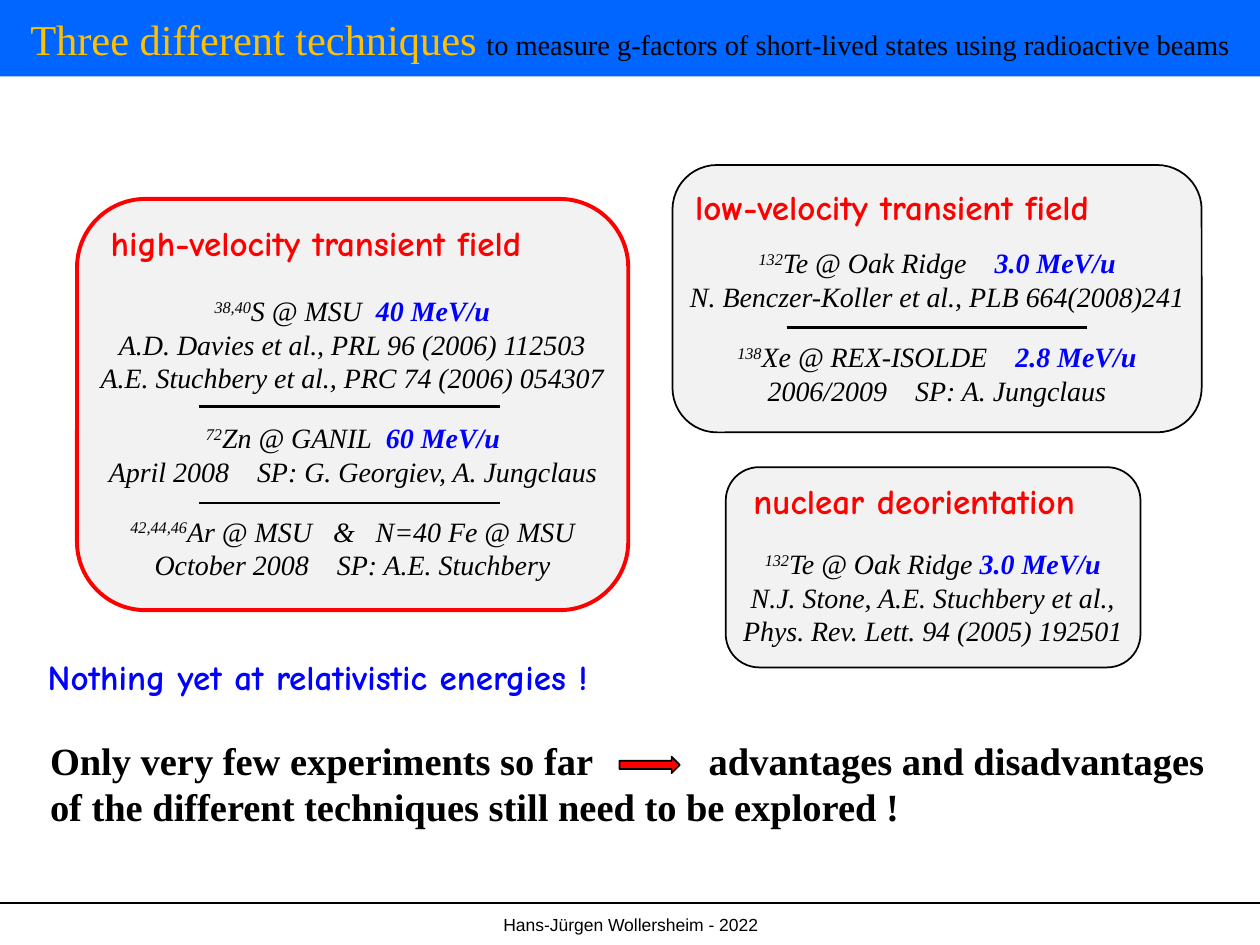
from dataclasses import dataclass, field

from lxml import etree
from pptx import Presentation
from pptx import util as u
from pptx.dml.color import RGBColor
from pptx.enum import shapes, text
from pptx.oxml import ns

Pt = u.Pt
BLACK = RGBColor(0x00, 0x00, 0x00)
RED = RGBColor(0xFF, 0x00, 0x00)
BLUE = RGBColor(0x00, 0x00, 0xFF)
GOLD = RGBColor(0xFF, 0xC0, 0x00)
BANNER_BLUE = RGBColor(0x00, 0x66, 0xFF)
PALE_GREY = RGBColor(0xF2, 0xF2, 0xF2)

SERIF = "Times New Roman"
BODY = {"name": SERIF, "size": Pt(16), "italic": True, "color": BLACK}
ENERGY = BODY | {"bold": True, "color": BLUE}
HEADING = {"name": "Comic Neue", "size": Pt(20), "bold": True, "color": RED}
CONCLUSION = {"name": SERIF, "size": Pt(22), "bold": True, "color": BLACK}
TITLE = {"name": SERIF, "size": Pt(24.3), "color": GOLD}
SUBTITLE = TITLE | {"size": Pt(16.2), "color": BLACK}
FOOTER = {"name": "Arial", "size": Pt(10), "color": BLACK}
CENTER, LEFT = text.PP_ALIGN.CENTER, text.PP_ALIGN.LEFT


@dataclass(frozen=True)
class Run:
    text: str
    style: dict
    superscript: bool = False
    tracking: float = 0


Line = list[Run]


@dataclass(frozen=True)
class Box:
    left: float
    top: float
    width: float
    height: float

    def lengths(self) -> list[u.Length]:
        return [Pt(value) for value in (self.left, self.top, self.width, self.height)]


@dataclass(frozen=True)
class Card:
    frame: Box
    border: RGBColor
    border_width: float
    heading: str
    heading_box: Box
    entries: list[tuple[Box, list[Line]]]
    rule_left: float = 0
    rule_tops: list[float] = field(default_factory=list)


def gap(spaces: int, style: dict) -> Run:
    """One space, tracked out to the width of several."""
    return Run(" ", style, tracking=(spaces - 1) * style["size"].pt / 4)


def plain(*parts: str, spaces: int = 4, style: dict = BODY) -> Line:
    """A line whose parts are set apart by wide gaps."""
    line = [Run(parts[0], style)]
    for part in parts[1:]:
        line += [gap(spaces, style), Run(part, style)]
    return line


def beam(mass: str, place: str, energy: str, spaces: int) -> Line:
    """An isotope with its laboratory and beam energy."""
    return [Run(mass, BODY, superscript=True), Run(place, BODY),
            gap(spaces, BODY), Run(energy, ENERGY)]


def write(frame, lines: list[Line], alignment) -> None:
    for index, line in enumerate(lines):
        paragraph = frame.paragraphs[0] if index == 0 else frame.add_paragraph()
        paragraph.alignment = alignment
        for item in line:
            run = paragraph.add_run()
            run.text = item.text
            for name, value in item.style.items():
                if name == "color":
                    run.font.color.rgb = value
                else:
                    setattr(run.font, name, value)
            properties = run._r.get_or_add_rPr()
            if item.superscript:
                properties.set("baseline", "30000")
            if item.tracking:
                properties.set("spc", str(round(item.tracking * 100)))


def add_text(parent, box: Box, lines: list[Line], alignment=LEFT, wrap: bool = False) -> None:
    frame = parent.add_textbox(*box.lengths()).text_frame
    frame.word_wrap = wrap
    if not wrap:
        frame.auto_size = text.MSO_AUTO_SIZE.SHAPE_TO_FIT_TEXT
    write(frame, lines, alignment)


def add_block(parent, kind, box: Box, fill: RGBColor, border: RGBColor | None = None,
              border_width: float = 1):
    shape = parent.add_shape(kind, *box.lengths())
    shape.shadow.inherit = False
    shape.fill.solid()
    shape.fill.fore_color.rgb = fill
    if border is None:
        shape.line.fill.background()
    else:
        shape.line.color.rgb = border
        shape.line.width = Pt(border_width)
    return shape


def add_rule(parent, left: float, top: float, width: float) -> None:
    rule = parent.add_connector(shapes.MSO_CONNECTOR.STRAIGHT,
                                Pt(left), Pt(top), Pt(left + width), Pt(top))
    rule.line.color.rgb = BLACK
    rule.line.width = Pt(1.5)
    etree.SubElement(rule._element.spPr, ns.qn("a:effectLst"))


def add_card(slide, card: Card) -> None:
    group = slide.shapes.add_group_shape().shapes
    add_block(group, shapes.MSO_SHAPE.ROUNDED_RECTANGLE, card.frame, PALE_GREY,
              card.border, card.border_width)
    add_text(group, card.heading_box, [plain(card.heading, style=HEADING)])
    for box, lines in card.entries:
        add_text(group, box, lines, CENTER)
    for top in card.rule_tops:
        add_rule(group, card.rule_left, top, 171.8)


CARDS = [
    Card(Box(414.7, 267, 237, 114.4), BLACK, 1,
         "nuclear deorientation", Box(423.4, 270.7, 220.3, 31.5),
         [(Box(416, 308.9, 234, 65.4), [
             beam("132", "Te @ Oak Ridge", "3.0 MeV/u", 1),
             plain("N.J. Stone, A.E. Stuchbery et al.,"),
             plain("Phys. Rev. Lett. 94 (2005) 192501")])]),
    Card(Box(44, 113.7, 315, 235), RED, 2.25,
         "high-velocity transient field", Box(56.2, 123, 290.2, 31.5),
         [(Box(48.3, 164.3, 306, 65.4), [
             beam("38,40", "S @ MSU", "40 MeV/u", 2),
             plain("A.D. Davies et al., PRL 96 (2006) 112503"),
             plain("A.E. Stuchbery et al., PRC 74 (2006) 054307")]),
          (Box(53, 236.9, 297.4, 46), [
              beam("72", "Zn @ GANIL", "60 MeV/u", 2),
              plain("April 2008", "SP: G. Georgiev, A. Jungclaus")]),
          (Box(63.2, 290.2, 276.5, 46), [
              [Run("42,44,46", BODY, superscript=True),
               *plain("Ar @ MSU", "&", "N=40 Fe @ MSU", spaces=3)],
              plain("October 2008", "SP: A.E. Stuchbery")])],
         114, [232.4, 287.5]),
    Card(Box(384.3, 94.3, 302.4, 152.8), BLACK, 1,
         "low-velocity transient field", Box(390.2, 102.2, 290.2, 31.5),
         [(Box(385, 137, 301, 46), [
             beam("132", "Te @ Oak Ridge", "3.0 MeV/u", 4),
             plain("N. Benczer-Koller et al., PLB 664(2008)241")]),
          (Box(409, 190.6, 252.7, 46), [
              beam("138", "Xe @ REX-ISOLDE", "2.8 MeV/u", 4),
              plain("2006/2009", "SP: A. Jungclaus")])],
         449.5, [187]),
]


def main() -> None:
    presentation = Presentation()
    presentation.slide_width, presentation.slide_height = Pt(720), Pt(540)
    slide = presentation.slides.add_slide(presentation.slide_layouts[6])

    add_rule(slide.shapes, 0, 516, 720)
    add_text(slide.shapes, Box(0.7, 519, 719.3, 21),
             [plain("Hans-Jürgen Wollersheim - 2022", style=FOOTER)], CENTER, wrap=True)

    banner = add_block(slide.shapes, shapes.MSO_SHAPE.RECTANGLE, Box(0, 0, 720, 43.7), BANNER_BLUE)
    banner.text_frame.vertical_anchor = text.MSO_ANCHOR.MIDDLE
    write(banner.text_frame, [[
        Run("Three different techniques", TITLE),
        Run(" ", TITLE | {"size": Pt(21.6)}),
        Run("to measure g-factors of short-lived states using radioactive beams", SUBTITLE),
    ]], CENTER)

    for card in CARDS:
        add_card(slide, card)

    add_text(slide.shapes, Box(21.5, 417.6, 675.4, 60), [
        plain("Only very few experiments so far", "advantages and disadvantages",
              spaces=12, style=CONCLUSION),
        plain("of the different techniques still need to be explored !", style=CONCLUSION)])
    add_block(slide.shapes, shapes.MSO_SHAPE.RIGHT_ARROW, Box(354, 432.4, 34.5, 9.4), RED, BLACK)
    add_text(slide.shapes, Box(20.2, 370.8, 374.4, 31.5),
             [plain("Nothing yet at relativistic energies !", style=HEADING | {"color": BLUE})])

    presentation.save("out.pptx")


if __name__ == "__main__":
    main()
